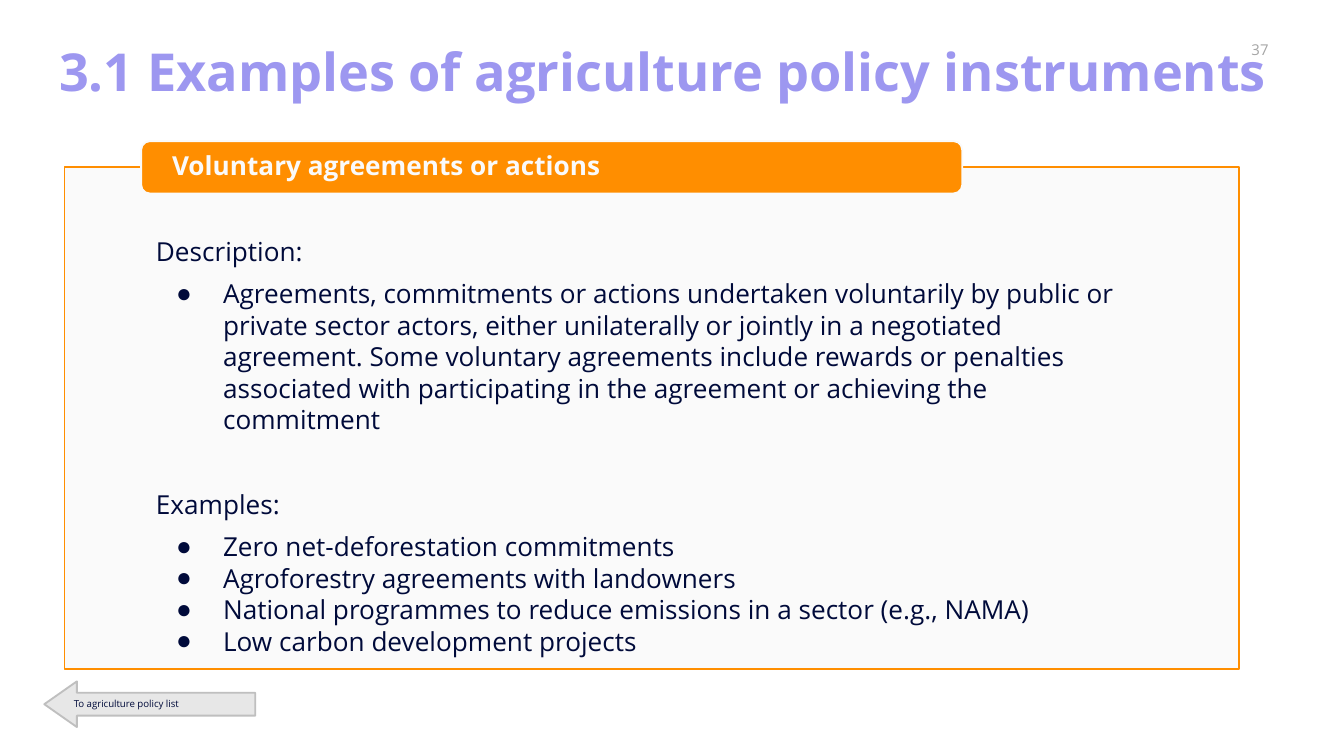
from lxml.etree import SubElement
from pptx import Presentation
from pptx.dml.color import RGBColor
from pptx.enum.shapes import MSO_SHAPE
from pptx.enum.text import MSO_ANCHOR, MSO_AUTO_SIZE, PP_ALIGN
from pptx.oxml.ns import qn
from pptx.util import Inches, Pt

FONT = "Open Sans"
NAVY, ORANGE, PALE = "000A3A", "FF8E00", "FAFAFA"
DESCRIPTION = (
    "Agreements, commitments or actions undertaken voluntarily by public or "
    "private sector actors, either unilaterally or jointly in a negotiated "
    "agreement. Some voluntary agreements include rewards or penalties "
    "associated with participating in the agreement or achieving the commitment"
)
SECTIONS = [
    ("Description:", [DESCRIPTION]),
    ("Examples:", [
        "Zero net-deforestation commitments",
        "Agroforestry agreements with landowners",
        "National programmes to reduce emissions in a sector (e.g., NAMA)",
        "Low carbon development projects",
    ]),
]


def color(hex_value):
    return RGBColor.from_string(hex_value)


def set_all(target, values):
    for name, value in values.items():
        setattr(target, name, value)


def place(item, box):
    set_all(item, dict(zip(("left", "top", "width", "height"), map(Inches, box))))


def format_frame(frame, inset=(0.1, 0.05), anchor=MSO_ANCHOR.MIDDLE):
    across, down = map(Inches, inset)
    set_all(frame, {
        "word_wrap": True, "auto_size": MSO_AUTO_SIZE.NONE, "vertical_anchor": anchor,
        "margin_left": across, "margin_right": across,
        "margin_top": down, "margin_bottom": down,
    })


def write(paragraph, text, size, hue, bold=False, align=PP_ALIGN.LEFT,
          spacing=1.0, before=0, after=0):
    set_all(paragraph, {
        "alignment": align, "line_spacing": spacing,
        "space_before": Pt(before), "space_after": Pt(after),
    })
    run = paragraph.add_run()
    run.text = text
    set_all(run.font, {"name": FONT, "size": Pt(size), "bold": bold})
    run.font.color.rgb = color(hue)


def add_box(slide, kind, box, fill, line):
    shape = slide.shapes.add_shape(kind, *map(Inches, box))
    shape.shadow.inherit = False
    shape.fill.solid()
    shape.fill.fore_color.rgb = color(fill)
    shape.line.color.rgb = color(line)
    shape.line.width = Pt(1)
    return shape


def add_label(slide, box, inset, text, size, hue, **layout):
    label = slide.shapes.add_textbox(*map(Inches, box)).text_frame
    format_frame(label, inset)
    write(label.paragraphs[0], text, size, hue, **layout)


def set_bullet(paragraph, bulleted):
    properties = paragraph._p.get_or_add_pPr()
    left, indent = (0.5, -0.35) if bulleted else (0, 0)
    properties.set("marL", str(Inches(left)))
    properties.set("indent", str(Inches(indent)))
    if not bulleted:
        SubElement(properties, qn("a:buNone"))
        return
    hue = SubElement(properties, qn("a:buClr"))
    SubElement(hue, qn("a:srgbClr"), val=NAVY)
    SubElement(properties, qn("a:buChar"), char="●")


def fill_title(slide, box):
    title = slide.shapes.title
    place(title, box)
    format_frame(title.text_frame)
    write(title.text_frame.paragraphs[0], "3.1 Examples of agriculture policy instruments",
          28, "9D97F0", bold=True, spacing=0.9)


def add_back_arrow(slide, box):
    arrow = add_box(slide, MSO_SHAPE.LEFT_ARROW, box, "E7E7E7", "BFBFBF")
    arrow.adjustments[1] = 0.714
    format_frame(arrow.text_frame)
    write(arrow.text_frame.paragraphs[0], "To agriculture policy list", 5.2, NAVY,
          spacing=0.8, after=12)


def fill_list(slide, box):
    body = slide.placeholders[1]
    body.element.getparent().append(body.element)
    place(body, box)
    frame = body.text_frame
    format_frame(frame, (0.68, 0.17), MSO_ANCHOR.TOP)
    for section, (heading, items) in enumerate(SECTIONS):
        lead = frame.add_paragraph() if section else frame.paragraphs[0]
        set_bullet(lead, False)
        write(lead, heading, 14, NAVY, before=28.7 if section else 0)
        for position, item in enumerate(items):
            entry = frame.add_paragraph()
            set_bullet(entry, True)
            write(entry, item, 14, NAVY, before=0 if position else 6)


def add_panel(slide, box):
    left, top, width, height = box
    panel = add_box(slide, MSO_SHAPE.RECTANGLE, box, PALE, ORANGE)
    fill_hue = panel.element.spPr.find(qn("a:solidFill"))[0]
    SubElement(fill_hue, qn("a:alpha"), val="90000")

    add_box(slide, MSO_SHAPE.ROUNDED_RECTANGLE,
            (left + 0.57, top - 0.19, 6.11, 0.39), ORANGE, PALE)
    add_label(slide, (left + 0.57, top - 0.17, 5.75, 0.35), (0.23, 0),
              "Voluntary agreements or actions", 14, PALE, bold=True, spacing=0.9)
    fill_list(slide, (left, top + 0.34, width, height - 0.8))


def main():
    deck = Presentation()
    width = Inches(10)
    set_all(deck, {"slide_width": width, "slide_height": width * 9 // 16})
    slide = deck.slides.add_slide(deck.slide_layouts[1])
    add_label(slide, (8.98, 0.26, 0.79, 0.22), (0, 0), "37", 8, "A5A5A5",
              align=PP_ALIGN.CENTER)
    add_back_arrow(slide, (0.33, 5.07, 1.57, 0.34))
    fill_title(slide, (0.34, 0.24, 9.32, 0.63))
    add_panel(slide, (0.48, 1.24, 8.74, 3.74))
    deck.save("out.pptx")


if __name__ == "__main__":
    main()
